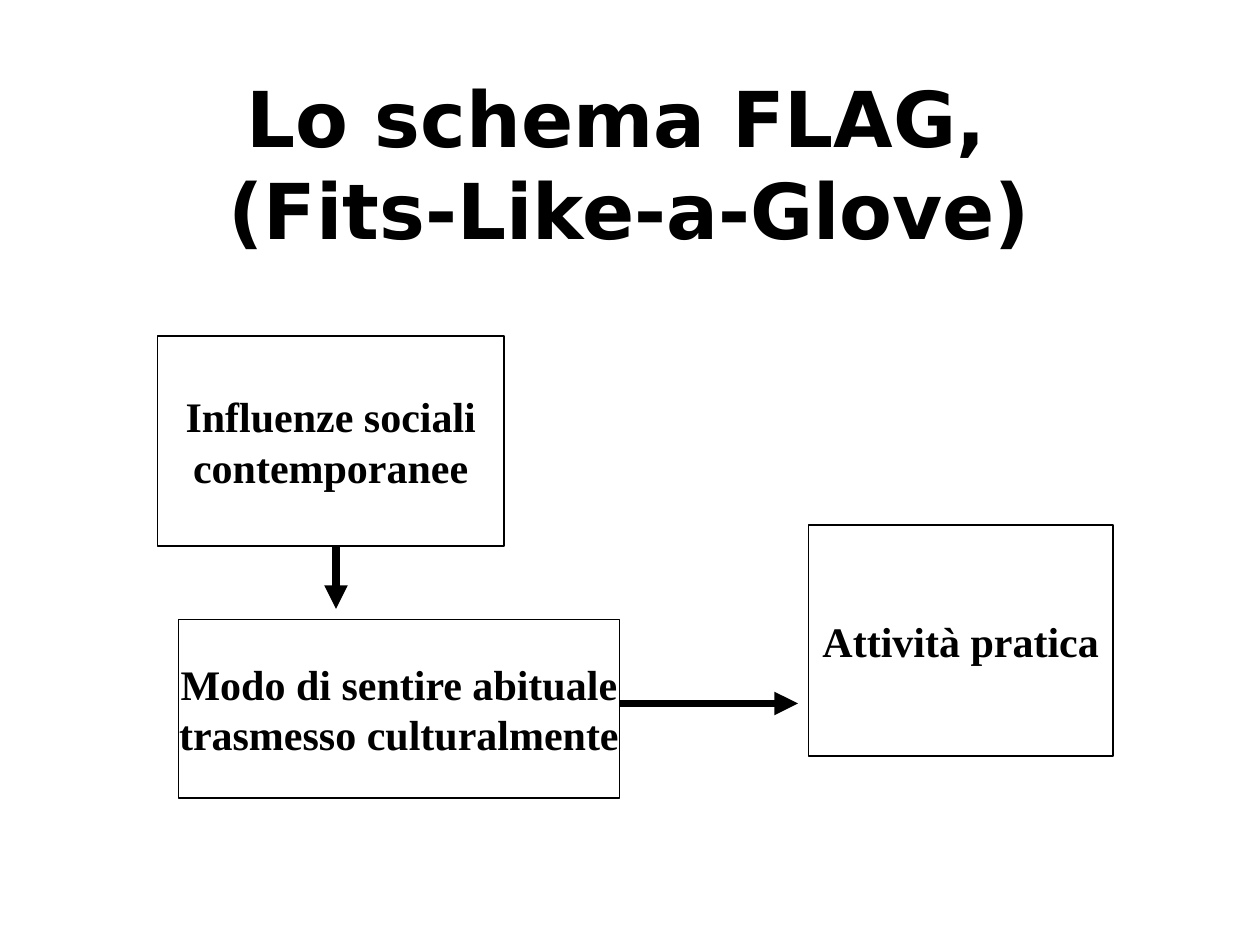
from lxml import etree
from pptx import Presentation
from pptx.dml.color import RGBColor
from pptx.enum.shapes import MSO_CONNECTOR, MSO_SHAPE
from pptx.enum.text import MSO_ANCHOR, PP_ALIGN
from pptx.oxml.ns import qn
from pptx.util import Inches, Pt

BLACK = RGBColor(0, 0, 0)
WHITE = RGBColor(255, 255, 255)
RECTANGLE = MSO_SHAPE.RECTANGLE
STRAIGHT = MSO_CONNECTOR.STRAIGHT
MIDDLE = MSO_ANCHOR.MIDDLE
CENTER = PP_ALIGN.CENTER
TITLE_FONT = "DejaVu Sans"
BODY_FONT = "Times New Roman"
COLUMNS, ROWS = 120, 90
CELL = Inches(10) // COLUMNS


def cells(*counts):
    return [count * CELL for count in counts]


def add_span(para, text, font, size):
    span = para.add_run()
    span.text = text
    span.font.name = font
    span.font.size = Pt(size)
    span.font.bold = True
    span.font.color.rgb = BLACK


def add_title(page, place, lines):
    box = page.shapes.add_textbox(*cells(*place))
    frame = box.text_frame
    frame.word_wrap = True
    frame.vertical_anchor = MIDDLE
    para = frame.paragraphs[0]
    para.alignment = CENTER
    for index, text in enumerate(lines):
        if index:
            para.add_line_break()
        add_span(para, text, TITLE_FONT, 44)


def add_box(page, place, lines):
    box = page.shapes.add_shape(RECTANGLE, *cells(*place))
    box.shadow.inherit = False
    box.fill.solid()
    box.fill.fore_color.rgb = WHITE
    box.line.color.rgb = BLACK
    box.line.width = Pt(0.75)
    frame = box.text_frame
    frame.word_wrap = False
    frame.vertical_anchor = MIDDLE
    for index, text in enumerate(lines):
        para = frame.add_paragraph() if index else frame.paragraphs[0]
        para.alignment = CENTER
        add_span(para, text, BODY_FONT, 24)


def add_arrow(page, start, end):
    arrow = page.shapes.add_connector(STRAIGHT, *cells(*start, *end))
    arrow.line.color.rgb = BLACK
    arrow.line.width = Pt(4.5)
    outline = arrow.line._get_or_add_ln()
    etree.SubElement(outline, qn("a:tailEnd"), type="triangle")
    etree.SubElement(outline.getparent(), qn("a:effectLst"))


def main():
    deck = Presentation()
    deck.slide_width, deck.slide_height = cells(COLUMNS, ROWS)
    page = deck.slides.add_slide(deck.slide_layouts[6])
    add_title(page, (9, 8, 102, 15), ["Lo schema FLAG, ", "(Fits-Like-a-Glove)"])
    add_box(page, (77, 50, 29, 22), ["Attività pratica"])
    add_box(page, (15, 32, 33, 20), ["Influenze sociali", "contemporanee"])
    add_box(page, (17, 59, 42, 17), ["Modo di sentire abituale", "trasmesso culturalmente"])
    add_arrow(page, (32, 52), (32, 58))
    add_arrow(page, (59, 67), (76, 67))
    deck.save("out.pptx")


if __name__ == "__main__":
    main()
